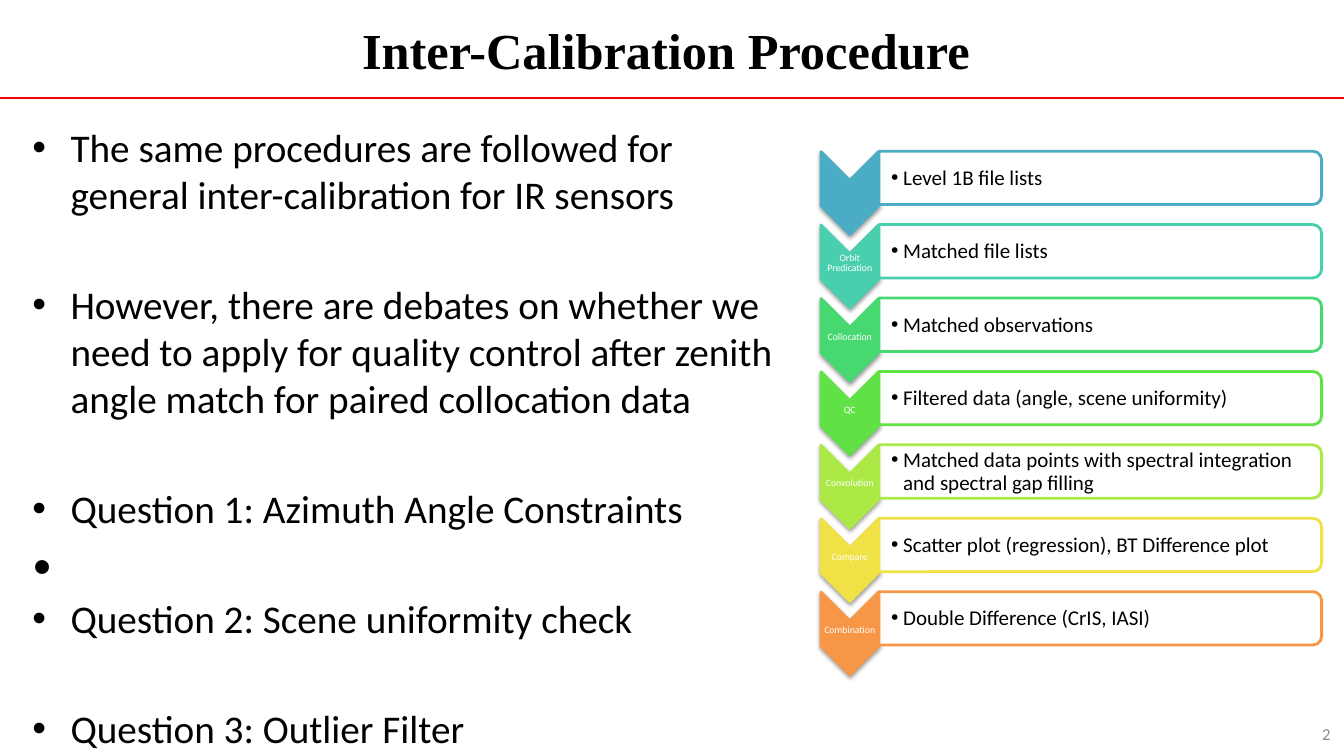
from dataclasses import dataclass

from lxml.etree import SubElement
from pptx import Presentation
from pptx.dml.color import RGBColor
from pptx.enum.shapes import MSO_CONNECTOR as Connector, MSO_SHAPE as Preset
from pptx.enum.text import MSO_ANCHOR as Anchor, MSO_AUTO_SIZE as AutoSize, PP_ALIGN as Align
from pptx.oxml.ns import qn
from pptx.util import Emu, Inches, Pt

SLIDE_WIDTH, SLIDE_HEIGHT = Inches(13.33), Inches(7.5)
COLUMNS, ROWS = 160, 90

BLACK = RGBColor(0x00, 0x00, 0x00)
WHITE = RGBColor(0xFF, 0xFF, 0xFF)
RED = RGBColor(0xFF, 0x00, 0x00)
GREY = RGBColor(0x8C, 0x8C, 0x8C)
BLUE = RGBColor(0x4B, 0xAC, 0xC6)
TEAL = RGBColor(0x49, 0xCF, 0xAE)
MINT = RGBColor(0x47, 0xD8, 0x72)
GREEN = RGBColor(0x60, 0xE1, 0x46)
LIME = RGBColor(0xAC, 0xE9, 0x46)
YELLOW = RGBColor(0xF0, 0xE1, 0x46)
ORANGE = RGBColor(0xF7, 0x96, 0x46)


@dataclass(frozen=True)
class Area:
    """A place on the slide, in grid columns and rows."""
    column: float
    row: float
    width: float
    height: float

    def down(self, rows: float) -> "Area":
        return Area(self.column, self.row + rows, self.width, self.height)

    def box(self) -> tuple[Emu, Emu, Emu, Emu]:
        return across(self.column), down(self.row), across(self.width), down(self.height)

    def turned_box(self) -> tuple[Emu, Emu, Emu, Emu]:
        """The box that covers this area once it is rotated by 90 degrees."""
        left, top, width, height = self.box()
        shift = (width - height) // 2
        return Emu(left + shift), Emu(top - shift), height, width


@dataclass(frozen=True)
class Step:
    label: str
    result: str
    color: RGBColor


@dataclass(frozen=True)
class Point:
    text: str
    space_before: float
    bulleted: bool = True


TITLE = Area(7.3, 0, 144, 11.64)
BODY = Area(2.64, 14.04, 92.8, 71)
PAGE_NUMBER = Area(122.28, 84.96, 37.32, 4.8)
RULE_ROW = 11.64

STEP_PITCH = 8.74
CHEVRON = Area(97.74, 18.06, 6.84, 9.84)
LABEL = Area(97.74, 21.12, 6.84, 3)
CARD = Area(104.64, 18, 52.7, 6.36)
RESULT = Area(104.64, 18.36, 52.44, 5.76)

POINTS = [
    Point("The same procedures are followed for general inter-calibration for IR sensors", 0),
    Point("However, there are debates on whether we need to apply for quality control "
          "after zenith angle match for paired collocation data", 45),
    Point("Question 1: Azimuth Angle Constraints", 45),
    Point("•", 5.6, bulleted=False),
    Point("Question 2: Scene uniformity check", 5.6),
    Point("Question 3: Outlier Filter", 45),
]

STEPS = [
    Step("", "Level 1B file lists", BLUE),
    Step("Orbit Predication", "Matched file lists", TEAL),
    Step("Collocation", "Matched observations", MINT),
    Step("QC", "Filtered data (angle, scene uniformity)", GREEN),
    Step("Convolution", "Matched data points with spectral integration "
         "and spectral gap filling", LIME),
    Step("Compare", "Scatter plot (regression), BT Difference plot", YELLOW),
    Step("Combination", "Double Difference (CrIS, IASI)", ORANGE),
]


def across(columns: float) -> Emu:
    return Emu(round(SLIDE_WIDTH * columns / COLUMNS))


def down(rows: float) -> Emu:
    return Emu(round(SLIDE_HEIGHT * rows / ROWS))


def place(shape, area: Area) -> None:
    shape.left, shape.top, shape.width, shape.height = area.box()


def style(para, size: float, color: RGBColor, font: str = "Calibri", bold: bool = False) -> None:
    for span in para.runs:
        span.font.name, span.font.size, span.font.bold = font, Pt(size), bold
        span.font.color.rgb = color


def hang(para, indent: float, bulleted: bool = True) -> None:
    """Give a paragraph a hanging indent in inches, with or without a bullet."""
    props = para._p.get_or_add_pPr()
    props.set("marL", str(Inches(indent)))
    props.set("indent", str(-Inches(indent)))
    if bulleted:
        SubElement(props, qn("a:buFont"), typeface="Arial")
        SubElement(props, qn("a:buChar"), char="•")
    else:
        SubElement(props, qn("a:buNone"))


def add_text(page, area: Area, text: str, size: float, color: RGBColor, align: Align,
             insets: tuple[float, float] = (0, 0)):
    """Add a middle-anchored text box; insets are left and other sides, in inches."""
    frame = page.shapes.add_textbox(*area.box()).text_frame
    frame.word_wrap = True
    frame.vertical_anchor = Anchor.MIDDLE
    frame.margin_left = Inches(insets[0])
    frame.margin_top = frame.margin_right = frame.margin_bottom = Inches(insets[1])
    frame.text = text
    para = frame.paragraphs[0]
    para.alignment = align
    style(para, size, color)
    return para


def add_turned(page, preset: Preset, area: Area, fill: RGBColor, line: RGBColor):
    shape = page.shapes.add_shape(preset, *area.turned_box())
    shape.rotation = 90
    shape.shadow.inherit = False
    shape.fill.solid()
    shape.fill.fore_color.rgb = fill
    shape.line.color.rgb = line
    shape.line.width = Pt(2)
    return shape


def cast_shadow(shape) -> None:
    effects = shape._element.spPr.find(qn("a:effectLst"))
    shadow = SubElement(effects, qn("a:outerShdw"), blurRad=str(Pt(3.1)), dist=str(Pt(1.6)),
                        dir="5400000", rotWithShape="0")
    color = SubElement(shadow, qn("a:srgbClr"), val=str(BLACK))
    SubElement(color, qn("a:alpha"), val="38000")


def add_step(page, step: Step, offset: float) -> None:
    cast_shadow(add_turned(page, Preset.CHEVRON, CHEVRON.down(offset), step.color, step.color))
    if step.label:
        label = add_text(page, LABEL.down(offset), step.label, 7, WHITE, Align.CENTER)
        label.line_spacing = 0.9
    card = add_turned(page, Preset.ROUND_2_SAME_RECTANGLE, CARD.down(offset), WHITE, step.color)
    card_color = card._element.spPr.find(qn("a:solidFill"))[0]
    SubElement(card_color, qn("a:alpha"), val="90000")
    result = add_text(page, RESULT.down(offset), step.result, 15, BLACK, Align.LEFT, (0.12, 0.01))
    hang(result, 0.12)
    result.line_spacing = 0.9


def add_rule(page) -> None:
    rule = page.shapes.add_connector(Connector.STRAIGHT, 0, down(RULE_ROW),
                                     SLIDE_WIDTH, down(RULE_ROW))
    rule.line.color.rgb = RED
    rule.line.width = Pt(1.25)
    SubElement(rule._element.spPr, qn("a:effectLst"))


def fill_title(title) -> None:
    place(title, TITLE)
    frame = title.text_frame
    frame.text = "Inter-Calibration Procedure"
    frame.auto_size = AutoSize.NONE
    frame.vertical_anchor = Anchor.MIDDLE
    frame.paragraphs[0].alignment = Align.CENTER
    style(frame.paragraphs[0], 36, BLACK, "Times New Roman", bold=True)


def fill_body(body) -> None:
    place(body, BODY)
    frame = body.text_frame
    frame.auto_size = AutoSize.NONE
    frame.text = "\n".join(point.text for point in POINTS)
    for para, point in zip(frame.paragraphs, POINTS):
        hang(para, 0.38, point.bulleted)
        para.space_before = Pt(point.space_before)
        style(para, 28, BLACK)


def main() -> None:
    deck = Presentation()
    deck.slide_width, deck.slide_height = SLIDE_WIDTH, SLIDE_HEIGHT
    page = deck.slides.add_slide(deck.slide_layouts[1])
    add_rule(page)
    fill_title(page.shapes.title)
    fill_body(page.placeholders[1])
    for index, step in enumerate(STEPS):
        add_step(page, step, index * STEP_PITCH)
    add_text(page, PAGE_NUMBER, "2", 12, GREY, Align.RIGHT, (0.1, 0.1))
    deck.save("out.pptx")


if __name__ == "__main__":
    main()
